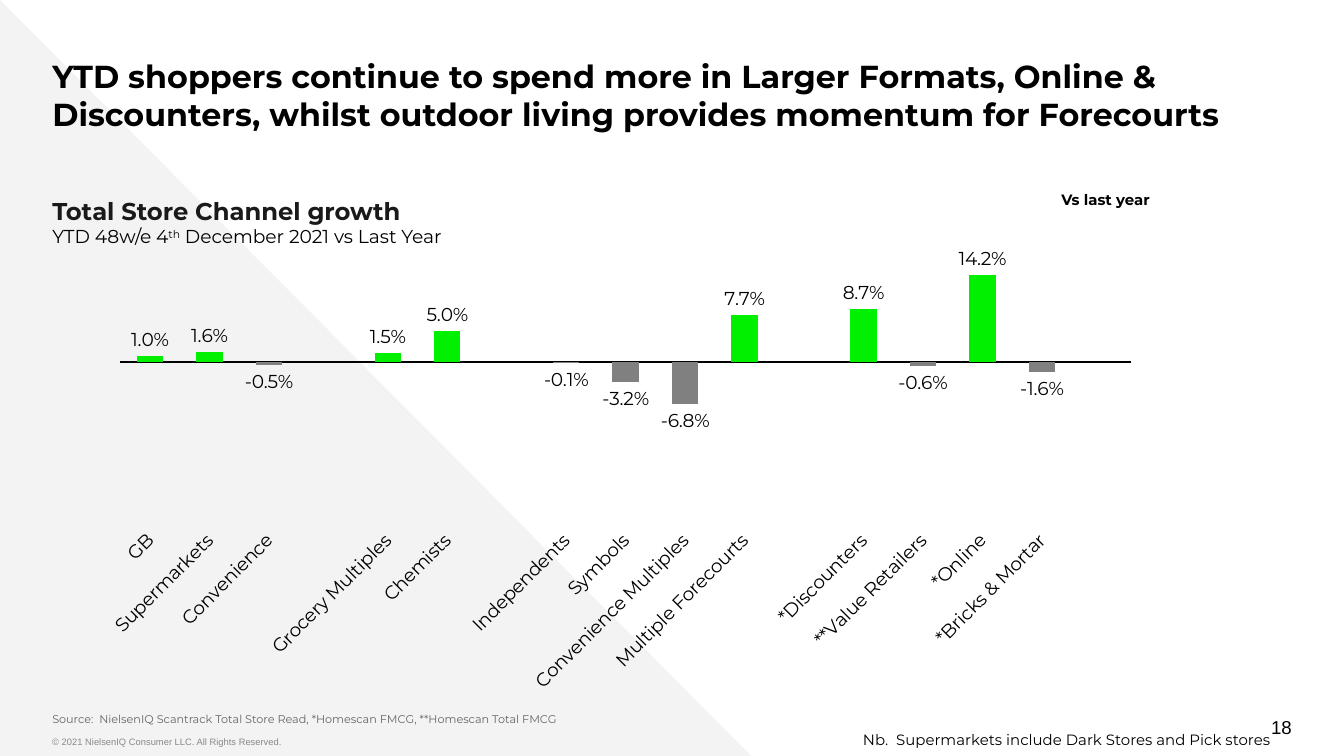
from pptx import Presentation
from pptx.chart.data import CategoryChartData
from pptx.dml.color import RGBColor
from pptx.enum.chart import (XL_CHART_TYPE, XL_LABEL_POSITION,
                             XL_TICK_LABEL_POSITION, XL_TICK_MARK)
from pptx.enum.shapes import MSO_SHAPE
from pptx.enum.text import MSO_ANCHOR, MSO_AUTO_SIZE, PP_ALIGN
from pptx.oxml import parse_xml
from pptx.oxml.ns import nsdecls
from pptx.util import Pt

COLUMN = XL_CHART_TYPE.COLUMN_CLUSTERED
OUT_END = XL_LABEL_POSITION.OUTSIDE_END
LOW = XL_TICK_LABEL_POSITION.LOW
NO_TICK = XL_TICK_MARK.NONE
TRIANGLE = MSO_SHAPE.RIGHT_TRIANGLE
TOP, MIDDLE, BOTTOM = MSO_ANCHOR.TOP, MSO_ANCHOR.MIDDLE, MSO_ANCHOR.BOTTOM
LEFT, RIGHT = PP_ALIGN.LEFT, PP_ALIGN.RIGHT
NO_FIT = MSO_AUTO_SIZE.NONE

SANS, PLAIN = "Montserrat", "Arial"
COLORS = {"black": "000000", "ink": "1A1A1A", "source": "666666",
          "legal": "888888", "wedge": "F3F3F3", "up": "00F000",
          "down": "808080"}
EDGE = 28  # left margin
GROWTH = [
    ("GB", 0.01), ("Supermarkets", 0.016), ("Convenience", -0.005),
    (" ", None),
    ("Grocery Multiples", 0.015), ("Chemists", 0.05),
    ("", None),
    ("Independents", -0.001), ("Symbols", -0.032),
    ("Convenience Multiples", -0.068), ("Multiple Forecourts", 0.077),
    ("", None),
    ("*Discounters", 0.087), ("**Value Retailers", -0.006),
    ("*Online", 0.142), ("*Bricks & Mortar", -0.016),
    ("", None),
]


def rgb(name):
    return RGBColor.from_string(COLORS[name])


def style(font, size, color="black", name=SANS, bold=False):
    values = {"size": Pt(size), "name": name, "bold": bold}
    for key, value in values.items():
        setattr(font, key, value)
    font.color.rgb = rgb(color)


def place(shape, box):
    for key, value in zip(("left", "top", "width", "height"), box):
        setattr(shape, key, Pt(value))


def set_frame(shape, side=0, edge=3.6, anchor=TOP, wrap=True, align=LEFT):
    """Set the text frame and return its first paragraph."""
    frame = shape.text_frame
    values = {"margin_left": Pt(side), "margin_right": Pt(side),
              "margin_top": Pt(edge), "margin_bottom": Pt(edge),
              "vertical_anchor": anchor, "word_wrap": wrap,
              "auto_size": NO_FIT}
    for key, value in values.items():
        setattr(frame, key, value)
    para = frame.paragraphs[0]
    para.alignment = align
    para.space_before = Pt(0)
    return para


def add_run(para, text, *look, **more):
    run = para.add_run()
    run.text = text
    style(run.font, *look, **more)
    return run


def fill_holder(holder, box, text, anchor, **look):
    place(holder, box)
    para = set_frame(holder, edge=7.2, anchor=anchor)
    add_run(para, text, **look)


def add_label(slide, box, text, look, **frame):
    label = slide.shapes.add_textbox(*map(Pt, box))
    add_run(set_frame(label, **frame), text, **look)


def add_wedge(slide):
    wedge = slide.shapes.add_shape(TRIANGLE, 0, 0, Pt(402.5), Pt(405))
    wedge.shadow.inherit = False
    wedge.fill.solid()
    wedge.fill.fore_color.rgb = rgb("wedge")
    wedge.line.fill.background()
    slide.shapes._spTree.insert(2, wedge._element)  # send to back


def add_heading(slide):
    box = slide.shapes.add_textbox(Pt(EDGE), Pt(101.5), Pt(300), Pt(35))
    para = set_frame(box)
    add_run(para, "Total Store Channel growth", 13, "ink", bold=True)
    para.add_line_break()
    add_run(para, "YTD 48w/e 4", 10)
    power = add_run(para, "th", 10)
    power._r.get_or_add_rPr().set("baseline", "30000")
    add_run(para, " December 2021 vs Last Year", 10)


def set_plot(chart, x, y, w, h):
    """Fix the inner plot area, as shares of the chart."""
    area = chart._chartSpace.chart.plotArea
    for old in area.xpath("c:layout"):
        area.remove(old)
    spots = "".join(f'<c:{tag} val="{val}"/>' for tag, val in (
        ("layoutTarget", "inner"), ("xMode", "edge"), ("yMode", "edge"),
        ("x", x), ("y", y), ("w", w), ("h", h)))
    area.insert(0, parse_xml(
        f'<c:layout {nsdecls("c")}><c:manualLayout>{spots}'
        '</c:manualLayout></c:layout>'))


def set_axes(chart):
    scale = chart.value_axis
    values = {"minimum_scale": -0.25, "maximum_scale": 0.2,
              "has_major_gridlines": False, "visible": False}
    for key, value in values.items():
        setattr(scale, key, value)
    base = chart.category_axis
    values = {"tick_label_position": LOW, "major_tick_mark": NO_TICK,
              "minor_tick_mark": NO_TICK, "has_major_gridlines": False}
    for key, value in values.items():
        setattr(base, key, value)
    base.format.line.color.rgb = rgb("black")
    base.format.line.width = Pt(0.75)
    style(base.tick_labels.font, 10)
    turn = base._element.xpath("c:txPr/a:bodyPr")[0]
    turn.set("rot", "-2700000")
    turn.set("vert", "horz")


def paint(fill, color):
    fill.solid()
    fill.fore_color.rgb = rgb(color)


def add_growth(slide):
    data = CategoryChartData(number_format="0.0%")
    names, rates = zip(*GROWTH)
    data.categories = names
    data.add_series("Series 1", rates)
    chart = slide.shapes.add_chart(
        COLUMN, Pt(59), Pt(120.25), Pt(565), Pt(253.5), data).chart
    chart.has_legend = chart.has_title = False
    style(chart.font, 10)
    set_axes(chart)
    set_plot(chart, 0.007, 0.031, 0.961, 0.585)

    plot = chart.plots[0]
    plot.gap_width = 125
    plot.vary_by_categories = False
    plot.has_data_labels = True
    labels = plot.data_labels
    values = {"show_value": True, "position": OUT_END,
              "number_format": "0.0%", "number_format_is_linked": False}
    for key, value in values.items():
        setattr(labels, key, value)
    style(labels.font, 10)

    bars = plot.series[0]
    bars.invert_if_negative = False
    paint(bars.format.fill, "up")
    for i, rate in enumerate(rates):
        if rate is not None and rate < 0:
            paint(bars.points[i].format.fill, "down")


def main():
    deck = Presentation()
    deck.slide_width, deck.slide_height = Pt(720), Pt(405)
    slide = deck.slides.add_slide(deck.slide_layouts[0])
    title, source = slide.placeholders
    add_wedge(slide)
    fill_holder(title, (EDGE, 23, 687, 32),
                "YTD shoppers continue to spend more in Larger Formats, "
                "Online & Discounters, whilst outdoor living provides "
                "momentum for Forecourts", TOP, size=17, bold=True)
    fill_holder(source, (EDGE, 381.5, 642, 14.5),
                "Source:  NielsenIQ Scantrack Total Store Read, "
                "*Homescan FMCG, **Homescan Total FMCG",
                BOTTOM, size=6, color="source")
    add_growth(slide)
    add_heading(slide)
    add_label(slide, (EDGE, 391, 399, 14),
              "© 2021 NielsenIQ Consumer LLC. All Rights Reserved.",
              {"size": 5, "color": "legal", "name": PLAIN})
    add_label(slide, (530, 379, 162, 21.5), "18",
              {"size": 10, "name": PLAIN}, anchor=MIDDLE, align=RIGHT)
    add_label(slide, (453, 388, 235, 17),
              "Nb.  Supermarkets include Dark Stores and Pick stores",
              {"size": 8}, side=7.2, wrap=False, align=RIGHT)
    add_label(slide, (561.5, 98.5, 62.5, 17), "Vs last year",
              {"size": 8, "bold": True}, side=7.2, wrap=False)
    deck.save("out.pptx")


if __name__ == "__main__":
    main()
